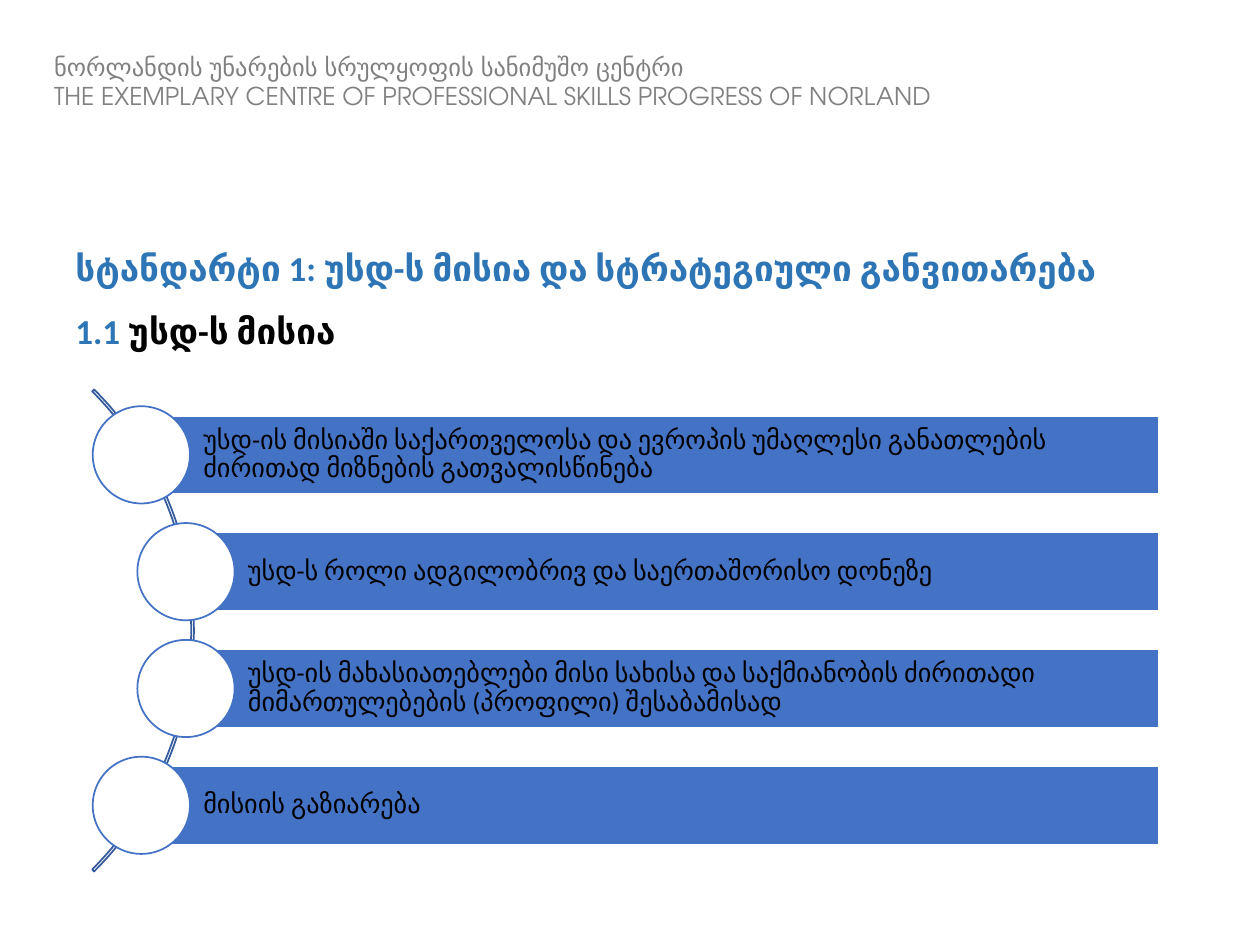
import pptx
import pptx.util
import pptx.dml.color
import pptx.enum.shapes
import pptx.enum.text

Cm = pptx.util.Cm
RGBColor = pptx.dml.color.RGBColor
MSO_SHAPE = pptx.enum.shapes.MSO_SHAPE
MSO_ANCHOR = pptx.enum.text.MSO_ANCHOR
PP_ALIGN = pptx.enum.text.PP_ALIGN

WHITE = RGBColor(0xFF, 0xFF, 0xFF)
BLACK = RGBColor(0x00, 0x00, 0x00)
GRAY = RGBColor(0x80, 0x80, 0x80)
BAR_BLUE = RGBColor(0x44, 0x72, 0xC4)
ARC_BLUE = RGBColor(0x36, 0x5B, 0x9D)
TITLE_BLUE = RGBColor(0x2E, 0x75, 0xB6)

HEADER = (
    "ნორლანდის უნარების სრულყოფის სანიმუშო ცენტრი",
    "THE EXEMPLARY CENTRE OF PROFESSIONAL SKILLS PROGRESS OF NORLAND",
)
OUTER_LEFT, INNER_LEFT, BAR_RIGHT = 2.85, 3.75, 23.36
FIRST_CENTER, ROW_PITCH = 9.17, 2.355
BAR_HEIGHT, CIRCLE_SIZE = 1.58, 1.96
CRITERIA = (
    (OUTER_LEFT, "უსდ-ის მისიაში საქართველოსა და ევროპის უმაღლესი განათლების ძირითად მიზნების გათვალისწინება"),
    (INNER_LEFT, "უსდ-ს როლი ადგილობრივ და საერთაშორისო დონეზე"),
    (INNER_LEFT, "უსდ-ის მახასიათებლები მისი სახისა და საქმიანობის ძირითადი მიმართულებების (პროფილი) შესაბამისად"),
    (OUTER_LEFT, "მისიის გაზიარება"),
)


def write_text(paragraph, text, size=15, color=BLACK, font="Calibri", bold=False, spacing=1.0):
    """Append a formatted run to a left-aligned paragraph."""
    paragraph.alignment = PP_ALIGN.LEFT
    paragraph.line_spacing = spacing
    run = paragraph.add_run()
    run.text = text
    run.font.size = pptx.util.Pt(size)
    run.font.name = font
    run.font.bold = bold
    run.font.color.rgb = color


def add_outline_shape(slide, kind, left, top, width, height, line, fill=None):
    """Add a preset shape, sized in centimetres, with a one-point line."""
    shape = slide.shapes.add_shape(kind, Cm(left), Cm(top), Cm(width), Cm(height))
    shape.shadow.inherit = False
    shape.line.color.rgb = line
    shape.line.width = pptx.util.Pt(1)
    if fill is None:
        shape.fill.background()
    else:
        shape.fill.solid()
        shape.fill.fore_color.rgb = fill
    return shape


def set_frame(frame, anchor, left=0.25, other=0.13):
    """Set wrapping, anchor and insets of a text frame."""
    frame.word_wrap = True
    frame.auto_size = pptx.enum.text.MSO_AUTO_SIZE.NONE
    frame.vertical_anchor = anchor
    frame.margin_left = Cm(left)
    frame.margin_top = frame.margin_right = frame.margin_bottom = Cm(other)


def fill_title(title):
    """Place the title and write the standard and its section."""
    title.left, title.top, title.width, title.height = Cm(1.27), Cm(4.01), Cm(22.66), Cm(3.61)
    set_frame(title.text_frame, MSO_ANCHOR.MIDDLE)
    paragraph = title.text_frame.paragraphs[0]
    style = dict(size=20, bold=True, spacing=1.5)
    write_text(paragraph, "სტანდარტი 1: უსდ-ს მისია და სტრატეგიული განვითარება", color=TITLE_BLUE, **style)
    paragraph.add_line_break()
    write_text(paragraph, "1.1 ", color=TITLE_BLUE, **style)
    write_text(paragraph, "უსდ-ს მისია", **style)


def add_arc(slide):
    """Add the thin arc that joins the circles."""
    arc = add_outline_shape(slide, MSO_SHAPE.BLOCK_ARC, -9.83, 5.84, 13.74, 13.74, ARC_BLUE)
    for index, value in enumerate((189, 27, 0.004)):
        arc.adjustments[index] = value


def add_criterion(slide, left, center, text):
    """Add a bar with its text and the circle at its left end."""
    bar = add_outline_shape(slide, MSO_SHAPE.RECTANGLE, left, center - BAR_HEIGHT / 2,
                            BAR_RIGHT - left, BAR_HEIGHT, WHITE, BAR_BLUE)
    set_frame(bar.text_frame, MSO_ANCHOR.MIDDLE, left=1.25, other=0.1)
    write_text(bar.text_frame.paragraphs[0], text, spacing=0.9)
    radius = CIRCLE_SIZE / 2
    add_outline_shape(slide, MSO_SHAPE.OVAL, left - radius, center - radius,
                      CIRCLE_SIZE, CIRCLE_SIZE, BAR_BLUE, WHITE)


def add_header(slide):
    """Add the bilingual name of the centre."""
    header = slide.shapes.add_textbox(Cm(0.84), Cm(0.91), Cm(19.63), Cm(2.26))
    header.fill.solid()
    header.fill.fore_color.rgb = WHITE
    frame = header.text_frame
    set_frame(frame, MSO_ANCHOR.TOP)
    for index, line in enumerate(HEADER):
        paragraph = frame.add_paragraph() if index else frame.paragraphs[0]
        write_text(paragraph, line, size=14, color=GRAY, font="TeX Gyre Adventor")


def main():
    """Build the slide and save it."""
    presentation = pptx.Presentation()
    presentation.slide_width, presentation.slide_height = Cm(25.4), Cm(19.05)
    slide = presentation.slides.add_slide(presentation.slide_layouts[5])
    fill_title(slide.shapes.title)
    add_arc(slide)
    for row, (left, text) in enumerate(CRITERIA):
        add_criterion(slide, left, FIRST_CENTER + row * ROW_PITCH, text)
    add_header(slide)
    presentation.save("out.pptx")


if __name__ == "__main__":
    main()
